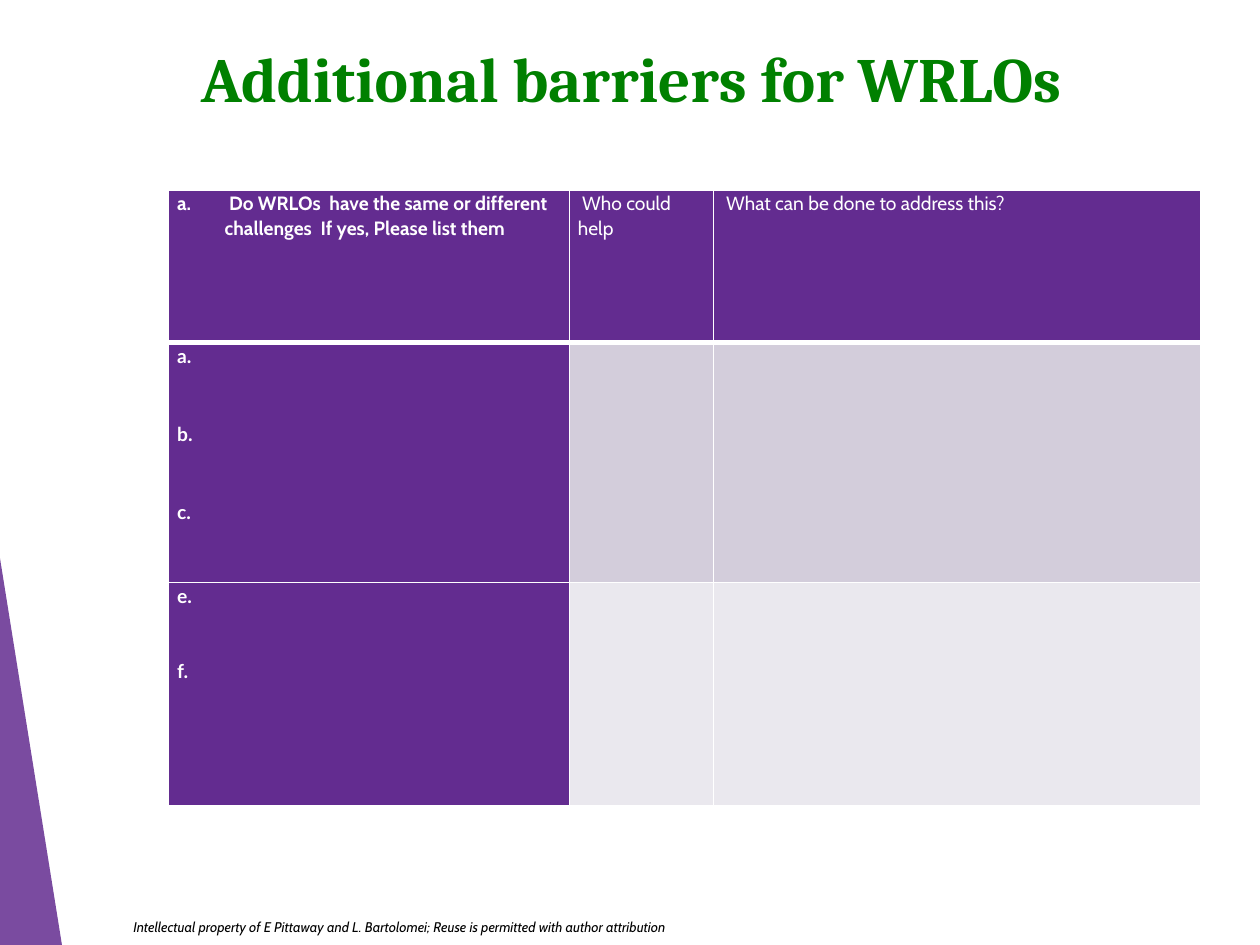
"""Build the slide on additional barriers for WRLOs."""
from lxml.etree import SubElement
from pptx import Presentation
from pptx.dml.color import RGBColor
from pptx.enum.text import MSO_ANCHOR, PP_ALIGN
from pptx.oxml import parse_xml
from pptx.oxml.ns import nsdecls, qn
from pptx.util import Cm, Pt

COLOURS = {
    "purple": "632C90",
    "green": "008000",
    "black": "000000",
    "white": "FFFFFF",
    "lilac": "D3CDDB",
    "pale": "EAE8EE",
}
HEADINGS = [
    " Do WRLOs  have the same or different challenges  If yes, Please list them",
    " Who could help",
    " What can be done to address this?",
]
COLUMN_WIDTHS = [8.08, 2.9, 9.82]
ROW_HEIGHTS = [3.07, 4.83, 4.5]
BODY_ROWS = [
    {"letters": ["a.", "b.", "c."], "gap": 30.3, "fill": "lilac"},
    {"letters": ["e.", "f."], "gap": 28.6, "fill": "pale"},
]


def colour(name):
    return RGBColor.from_string(COLOURS[name])


def write(para, text, *, font="Cabin", size=11, ink="white", bold=False,
          italic=False, align=None, spacing=None, after=None):
    """Add one formatted span of text to a paragraph."""
    span = para.add_run()
    span.text = text
    span.font.name = font
    span.font.size = Pt(size)
    span.font.bold = bold
    span.font.italic = italic
    span.font.color.rgb = colour(ink)
    if align is not None:
        para.alignment = align
    if spacing is not None:
        para.line_spacing = spacing
    if after is not None:
        para.space_after = Pt(after)


class SlideBuilder:
    """Hold the page and draw each kind of element on it."""

    def __init__(self, deck):
        self.page = deck.slides.add_slide(deck.slide_layouts[5])

    def wedge(self, points, fill, opacity):
        start, *others = [(Cm(x), Cm(y)) for x, y in points]
        builder = self.page.shapes.build_freeform(*start)
        builder.add_line_segments(others, close=True)
        shape = builder.convert_to_shape()
        shape.shadow.inherit = False
        shape.fill.solid()
        shape.fill.fore_color.rgb = colour(fill)
        shape.line.fill.background()
        tint = shape.fill._xPr.find(".//" + qn("a:srgbClr"))
        SubElement(tint, qn("a:alpha"), val=str(opacity * 1000))

    def label(self, text, left, top, width, height, **style):
        box = self.page.shapes.add_textbox(Cm(left), Cm(top), Cm(width), Cm(height))
        box.text_frame.word_wrap = True
        write(box.text_frame.paragraphs[0], text, **style)

    def title(self, text, left, top, width, height, **style):
        box = self.page.shapes.title
        box.left, box.top, box.width, box.height = map(Cm, (left, top, width, height))
        box.text_frame.vertical_anchor = MSO_ANCHOR.MIDDLE
        write(box.text_frame.paragraphs[0], text, **style)

    def table(self, left, top, widths, heights):
        frame = self.page.shapes.add_table(
            len(heights), len(widths), Cm(left), Cm(top),
            Cm(sum(widths)), Cm(sum(heights)))
        grid = frame.table
        for column, width in zip(grid.columns, widths):
            column.width = Cm(width)
        for row, height in zip(grid.rows, heights):
            row.height = Cm(height)
        return grid

    def cell(self, cell, fill, top=1, bottom=1):
        cell.margin_left = cell.margin_right = Cm(0.17)
        cell.margin_top = cell.margin_bottom = 0
        cell.fill.solid()
        cell.fill.fore_color.rgb = colour(fill)
        properties = cell._tc.get_or_add_tcPr()
        sides = {"lnL": 1, "lnR": 1, "lnT": top, "lnB": bottom}
        for index, (side, width) in enumerate(sides.items()):
            properties.insert(index, parse_xml(
                f'<a:{side} {nsdecls("a")} w="{Pt(width)}"><a:solidFill>'
                f'<a:srgbClr val="{COLOURS["white"]}"/></a:solidFill></a:{side}>'))

    def lettered(self, para, indent):
        properties = para._p.get_or_add_pPr()
        properties.set("marL", str(Cm(indent)))
        properties.set("indent", str(-Cm(indent)))
        SubElement(properties, qn("a:buFont"), typeface="Cabin")
        SubElement(properties, qn("a:buAutoNum"), type="alphaLcPeriod")


def main():
    deck = Presentation()
    deck.slide_width, deck.slide_height = Cm(25.4), Cm(19.05)
    slide = SlideBuilder(deck)
    slide.wedge([(0, 11.25), (1.25, 19.05), (0, 19.05)], "purple", 85)
    slide.label(
        "Intellectual property of E Pittaway and L. Bartolomei; "
        "Reuse is permitted with author attribution",
        2.44, 18.39, 14.73, 0.58, size=8, ink="black", italic=True)
    slide.title("Additional barriers for WRLOs", 1.9, 0.69, 21.64, 1.75,
                font="Cambria", size=36, ink="green", bold=True,
                align=PP_ALIGN.CENTER)

    grid = slide.table(3.4, 3.84, COLUMN_WIDTHS, ROW_HEIGHTS)
    for column, heading in enumerate(HEADINGS):
        cell = grid.cell(0, column)
        slide.cell(cell, "purple", bottom=3)
        para = cell.text_frame.paragraphs[0]
        if column == 0:
            slide.lettered(para, 0.96)
        write(para, heading, bold=column == 0, spacing=1.07, after=8)

    for row, body in enumerate(BODY_ROWS, start=1):
        for column in range(len(COLUMN_WIDTHS)):
            slide.cell(grid.cell(row, column), body["fill"] if column else "purple",
                       top=3 if row == 1 else 1)
        frame = grid.cell(row, 0).text_frame
        for index, letter in enumerate(body["letters"]):
            para = frame.add_paragraph() if index else frame.paragraphs[0]
            write(para, letter, font="Lato", bold=True, spacing=1.07,
                  after=body["gap"])
    deck.save("out.pptx")


if __name__ == "__main__":
    main()
